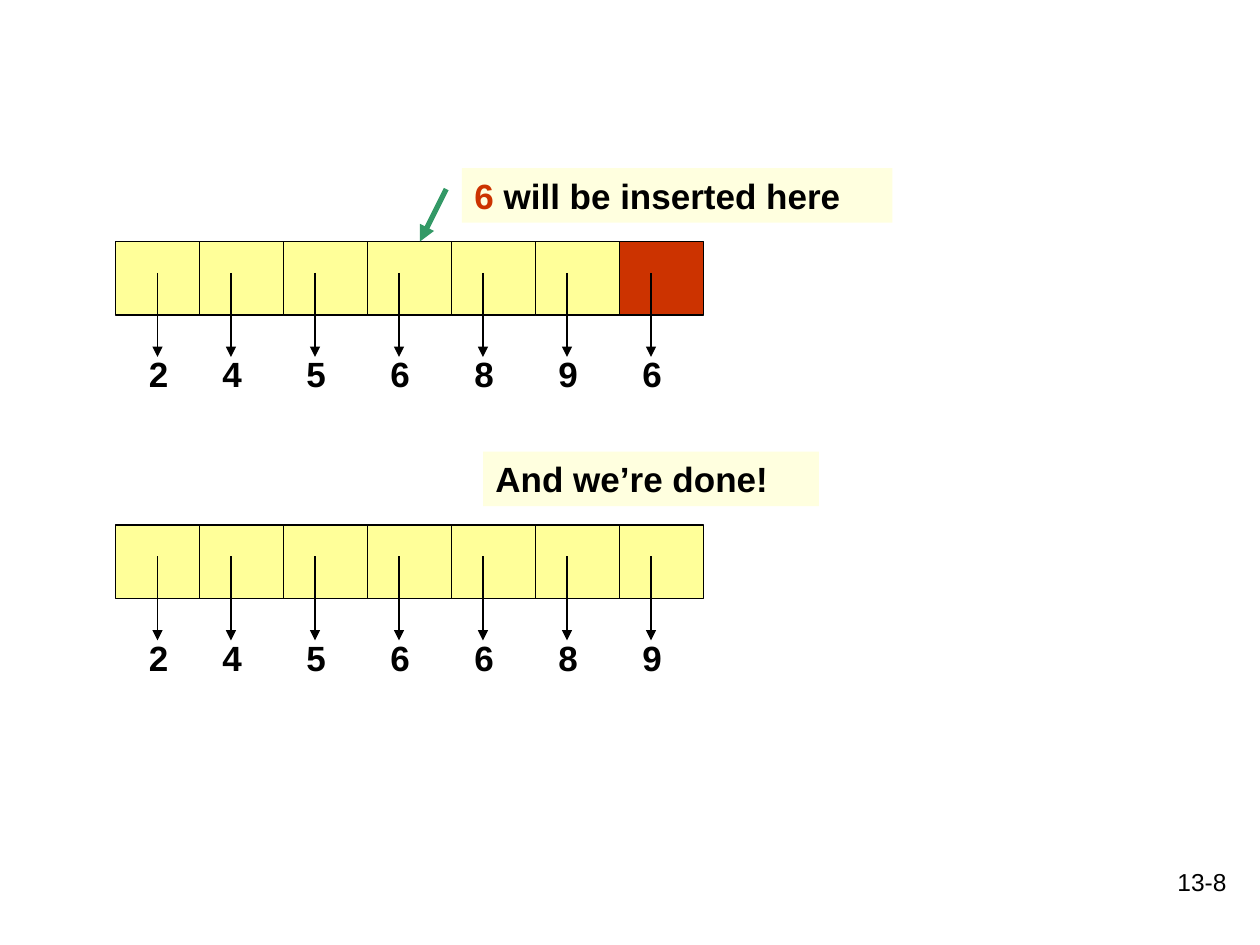
import pptx
import pptx.dml.color
import pptx.enum.shapes
import pptx.enum.text
import pptx.oxml
import pptx.oxml.ns
import pptx.util

COLORS = {"black": "000000", "cell": "FFFF99", "inserted": "CC3300",
          "label": "FFFFDF", "pointer": "339966"}
RGB = {name: pptx.dml.color.RGBColor.from_string(value) for name, value in COLORS.items()}

presentation = pptx.Presentation()
presentation.slide_width = pptx.util.Inches(10)
presentation.slide_height = pptx.util.Inches(7.5)
slide = presentation.slides.add_slide(presentation.slide_layouts[6])
UNIT = presentation.slide_width / 120  # the grid has 120 columns and 90 rows
RECTANGLE = pptx.enum.shapes.MSO_SHAPE.RECTANGLE
CELL_WIDTH, CELL_HEIGHT, TEXT_HEIGHT = 8, 7, 5.2
ARRAY_LEFT = 11


def add_block(bounds, fill=None, runs=(), size=20, bold=True, align="LEFT", outlined=False):
    """Add a rectangle in grid units; runs are (text, color name) pairs."""
    bounds = [round(value * UNIT) for value in bounds]
    if fill:
        shape = slide.shapes.add_shape(RECTANGLE, *bounds)
        shape.shadow.inherit = False
        shape.fill.solid()
        shape.fill.fore_color.rgb = RGB[fill]
        if outlined:
            shape.line.color.rgb = RGB["black"]
            shape.line.width = pptx.util.Pt(0.75)
        else:
            shape.line.fill.background()
    else:
        shape = slide.shapes.add_textbox(*bounds)
    if runs:
        frame = shape.text_frame
        frame.word_wrap = True
        frame.vertical_anchor = pptx.enum.text.MSO_ANCHOR.TOP
        paragraph = frame.paragraphs[0]
        paragraph.alignment = pptx.enum.text.PP_ALIGN[align]
        for text, color in runs:
            run = paragraph.add_run()
            run.text = text
            run.font.color.rgb = RGB[color]
            font_format = {"name": "Arial", "size": pptx.util.Pt(size), "bold": bold}
            for attribute, value in font_format.items():
                setattr(run.font, attribute, value)


def add_arrow(points, color="black", width=0.75):
    connector = slide.shapes.add_connector(
        pptx.enum.shapes.MSO_CONNECTOR.STRAIGHT, *[round(value * UNIT) for value in points])
    connector.line.color.rgb = RGB[color]
    connector.line.width = pptx.util.Pt(width)
    line = connector.line._get_or_add_ln()
    namespace = pptx.oxml.ns.nsdecls("a")
    line.append(pptx.oxml.parse_xml(f'<a:tailEnd {namespace} type="triangle"/>'))
    line.addnext(pptx.oxml.parse_xml(f"<a:effectLst {namespace}/>"))


add_block((93, 82, 25, 6), runs=[("13-8", "black")], size=14, bold=False, align="RIGHT")

# Each array: top row, values, index of the cell to insert, label column, label width, label
arrays = [
    (23, "2456896", 6, 44, 41, [("6", "inserted"), (" will be inserted here", "black")]),
    (50, "2456689", None, 46, 32, [("And we’re done!", "black")]),
]
for top, values, inserted, label_left, label_width, label in arrays:
    for index, value in enumerate(values):
        fill = "inserted" if index == inserted else "cell"
        add_block((ARRAY_LEFT + index * CELL_WIDTH, top, CELL_WIDTH, CELL_HEIGHT),
                  fill, outlined=True)
    for index, value in enumerate(values):
        # The first arrow is centred in its cell, the others sit one column to the left
        center = ARRAY_LEFT + index * CELL_WIDTH + (3 if index else 4)
        add_block((center - 2, top + 10, 5, TEXT_HEIGHT), runs=[(value, "black")])
        add_arrow((center, top + 3, center, top + 11))
    add_block((label_left, top - 7, label_width, TEXT_HEIGHT), "label", label)

add_arrow((42.5, 18, 40, 23), "pointer", 3)

presentation.save("out.pptx")
